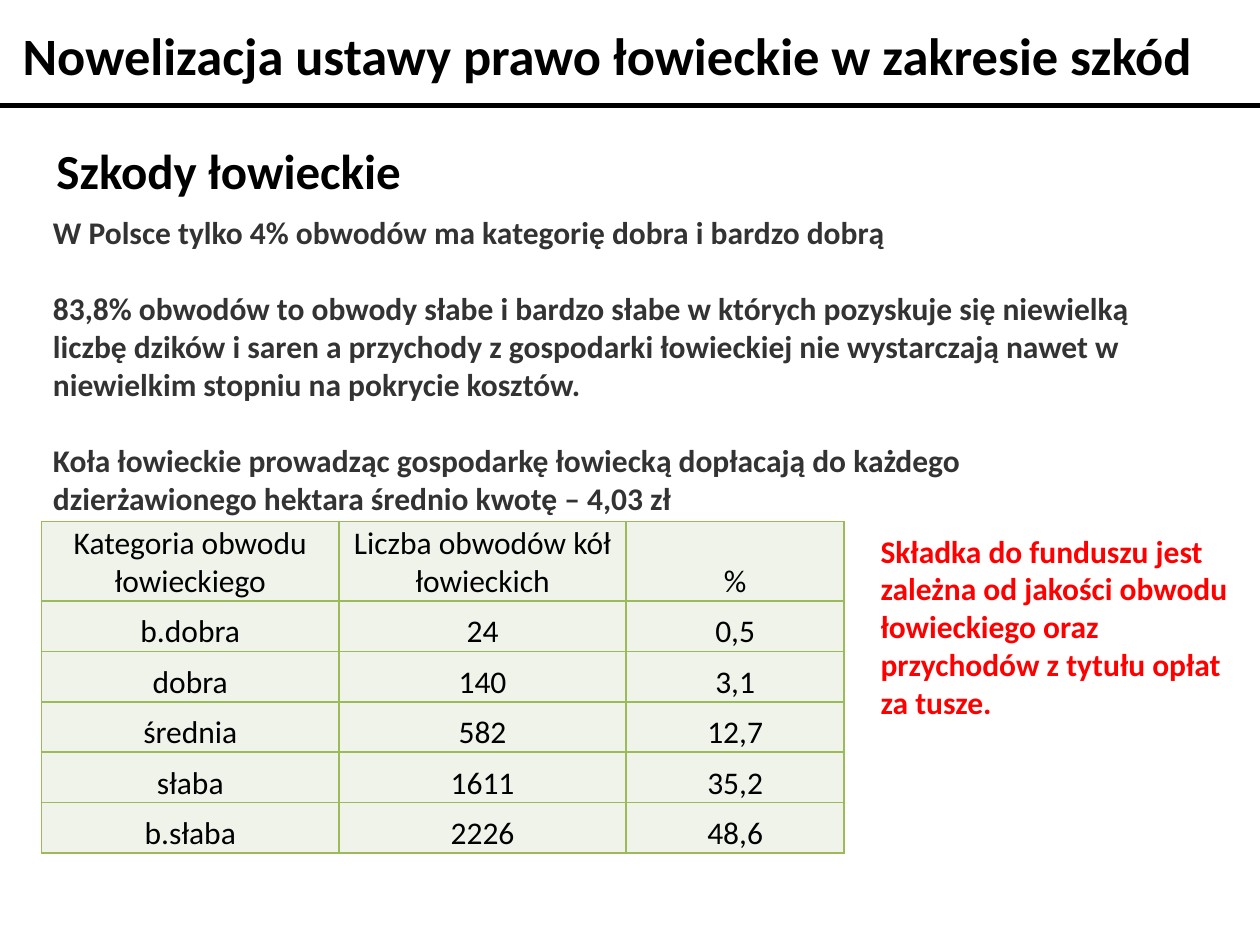
from dataclasses import dataclass

from lxml.etree import SubElement
from pptx import Presentation
from pptx.dml.color import RGBColor
from pptx.enum.shapes import MSO_CONNECTOR
from pptx.enum.text import MSO_ANCHOR, MSO_AUTO_SIZE, PP_ALIGN
from pptx.oxml.ns import qn
from pptx.util import Inches, Pt

TITLE = "Nowelizacja ustawy prawo łowieckie w zakresie szkód"
HEADING = "Szkody łowieckie"
BODY = [
    "W Polsce tylko 4% obwodów ma kategorię dobra i bardzo dobrą",
    "83,8% obwodów to obwody słabe i bardzo słabe w których pozyskuje się niewielką "
    "liczbę dzików i saren a przychody z gospodarki łowieckiej nie wystarczają nawet "
    "w niewielkim stopniu na pokrycie kosztów.",
    "Koła łowieckie prowadząc gospodarkę łowiecką dopłacają do każdego "
    "dzierżawionego hektara średnio kwotę – 4,03 zł",
]
NOTE = ("Składka do funduszu jest zależna od jakości obwodu łowieckiego oraz "
        "przychodów z tytułu opłat za tusze.")
CATEGORIES = [
    ("Kategoria obwodu łowieckiego", "Liczba obwodów kół łowieckich", "%"),
    ("b.dobra", "24", "0,5"),
    ("dobra", "140", "3,1"),
    ("średnia", "582", "12,7"),
    ("słaba", "1611", "35,2"),
    ("b.słaba", "2226", "48,6"),
]
COLUMN_WIDTHS = (2.36, 2.28, 1.73)
HEADER_HEIGHT, ROW_HEIGHT = 0.63, 0.4


@dataclass(frozen=True)
class Theme:
    font: str = "Calibri"
    ink: str = "000000"
    body_ink: str = "333333"
    alert: str = "FF0000"
    cell: str = "EFF3EA"
    border: str = "9BBB59"
    title_size: int = 30
    heading_size: int = 28
    text_size: int = 18
    paragraph_gap: int = 22


THEME = Theme()


def apply(target, values):
    for name, value in values.items():
        setattr(target, name, value)


def style(para, size, color, bold=True):
    apply(para.font, {"name": THEME.font, "size": Pt(size), "bold": bold})
    para.font.color.rgb = RGBColor.from_string(color)


def place(box, left, top, width, height):
    apply(box, {"left": Inches(left), "top": Inches(top),
                "width": Inches(width), "height": Inches(height)})


def write(box, texts, size, color, wrap=True):
    frame = box.text_frame
    apply(frame, {"word_wrap": wrap, "auto_size": MSO_AUTO_SIZE.NONE,
                  "vertical_anchor": MSO_ANCHOR.TOP})
    for index, text in enumerate(texts):
        para = frame.paragraphs[0] if index == 0 else frame.add_paragraph()
        para.text = text
        properties = para._p.get_or_add_pPr()
        properties.set("marL", "0")
        properties.set("indent", "0")
        SubElement(properties, qn("a:buNone"))
        apply(para, {"alignment": PP_ALIGN.LEFT,
                     "space_before": Pt(THEME.paragraph_gap if index else 0)})
        style(para, size, color)


def add_borders(cell):
    properties = cell._tc.get_or_add_tcPr()
    for side in ("lnL", "lnR", "lnT", "lnB"):
        line = SubElement(properties, qn(f"a:{side}"), w=str(Pt(1)))
        fill = SubElement(line, qn("a:solidFill"))
        SubElement(fill, qn("a:srgbClr"), val=THEME.border)


def add_category_table(page, left, top):
    heights = [HEADER_HEIGHT] + [ROW_HEIGHT] * (len(CATEGORIES) - 1)
    table = page.shapes.add_table(
        len(heights), len(COLUMN_WIDTHS), Inches(left), Inches(top),
        Inches(sum(COLUMN_WIDTHS)), Inches(sum(heights))).table
    for column, width in zip(table.columns, COLUMN_WIDTHS):
        column.width = Inches(width)
    for row, height, values in zip(table.rows, heights, CATEGORIES):
        row.height = Inches(height)
        for cell, value in zip(row.cells, values):
            inset = Inches(0.01)
            apply(cell, {"text": value, "vertical_anchor": MSO_ANCHOR.BOTTOM,
                         "margin_left": inset, "margin_right": inset,
                         "margin_top": inset, "margin_bottom": 0})
            add_borders(cell)
            cell.fill.solid()
            cell.fill.fore_color.rgb = RGBColor.from_string(THEME.cell)
            para = cell.text_frame.paragraphs[0]
            para.alignment = PP_ALIGN.CENTER
            style(para, THEME.text_size, THEME.ink, bold=False)


def add_rule(page, top, width):
    rule = page.shapes.add_connector(
        MSO_CONNECTOR.STRAIGHT, 0, Inches(top), width, Inches(top))
    rule.line.width = Pt(2.75)
    rule.line.color.rgb = RGBColor.from_string(THEME.ink)
    SubElement(rule._element.spPr, qn("a:effectLst"))


def main():
    deck = Presentation()
    apply(deck, {"slide_width": Inches(10), "slide_height": Inches(7.5)})
    page = deck.slides.add_slide(deck.slide_layouts[1])
    add_rule(page, 0.84, deck.slide_width)

    title, body = page.placeholders
    place(title, 0.08, 0.13, 9.88, 0.61)
    write(title, [TITLE], THEME.title_size, THEME.ink)
    place(body, 0.32, 1.64, 8.9, 2.52)
    write(body, BODY, THEME.text_size, THEME.body_ink)

    heading = page.shapes.add_textbox(0, 0, 0, 0)
    place(heading, 0.35, 1.07, 2.97, 0.57)
    write(heading, [HEADING], THEME.heading_size, THEME.ink, wrap=False)

    add_category_table(page, 0.33, 4.14)

    note = page.shapes.add_textbox(0, 0, 0, 0)
    place(note, 6.89, 4.17, 3.07, 1.62)
    write(note, [NOTE], THEME.text_size, THEME.alert)

    deck.save("out.pptx")


if __name__ == "__main__":
    main()
